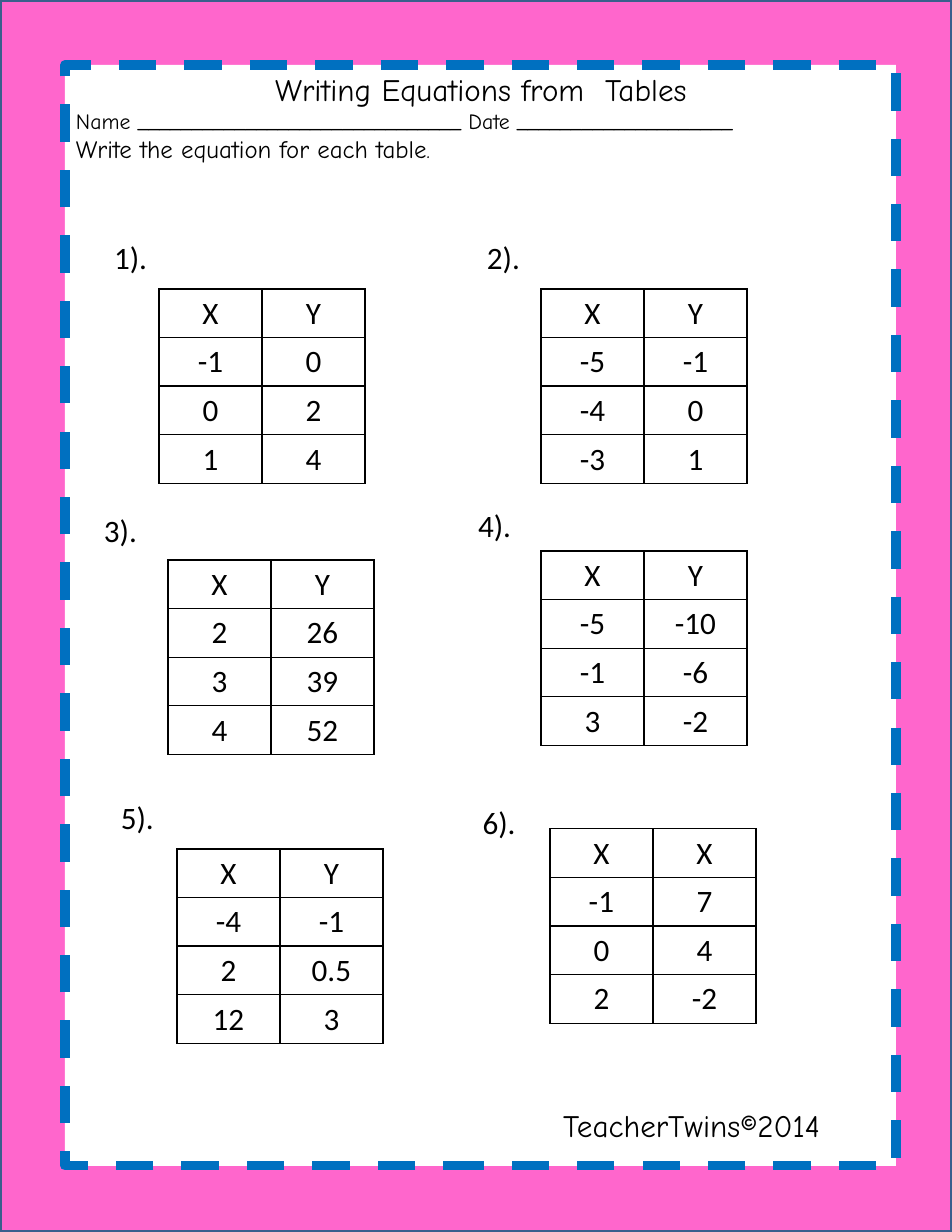
import pptx
import pptx.dml.color
import pptx.enum.dml
import pptx.enum.shapes
import pptx.enum.text
import pptx.oxml
import pptx.oxml.ns
import pptx.util

Inches = pptx.util.Inches
Pt = pptx.util.Pt
RGBColor = pptx.dml.color.RGBColor
PP_ALIGN = pptx.enum.text.PP_ALIGN

PINK = RGBColor(0xFF, 0x66, 0xCC)
NAVY = RGBColor(0x3A, 0x5F, 0x8C)
BLUE = RGBColor(0x00, 0x70, 0xC0)
WHITE = RGBColor(0xFF, 0xFF, 0xFF)
BLACK = RGBColor(0x00, 0x00, 0x00)

HAND_FONT = "Comic Neue"
PLAIN_FONT = "Calibri"
COLUMN_WIDTH = 0.92
ROW_HEIGHT = 0.43
LABEL_HEIGHT = 0.44

# label left, label top, label width, table offset across, table offset down, rows
PROBLEMS = [
    (0.92, 2.08, 0.83, 0.5, 0.5, [("X", "Y"), ("-1", "0"), ("0", "2"), ("1", "4")]),
    (4.25, 2.08, 1.33, 0.58, 0.5, [("X", "Y"), ("-5", "-1"), ("-4", "0"), ("-3", "1")]),
    (0.83, 4.52, 0.92, 0.67, 0.48, [("X", "Y"), ("2", "26"), ("3", "39"), ("4", "52")]),
    (4.17, 4.47, 0.5, 0.66, 0.45, [("X", "Y"), ("-5", "-10"), ("-1", "-6"), ("3", "-2")]),
    (0.98, 7.08, 0.71, 0.6, 0.5, [("X", "Y"), ("-4", "-1"), ("2", "0.5"), ("12", "3")]),
    (4.21, 7.12, 1.42, 0.7, 0.28, [("X", "X"), ("-1", "7"), ("0", "4"), ("2", "-2")]),
]


def format_run(run, font_name, size):
    run.font.name = font_name
    run.font.size = Pt(size)
    run.font.color.rgb = BLACK


def add_text(slide, left, top, width, height, paragraphs, font_name):
    box = slide.shapes.add_textbox(Inches(left), Inches(top), Inches(width), Inches(height))
    text_frame = box.text_frame
    text_frame.word_wrap = True
    text_frame.auto_size = pptx.enum.text.MSO_AUTO_SIZE.SHAPE_TO_FIT_TEXT
    for index, (alignment, runs) in enumerate(paragraphs):
        paragraph = text_frame.add_paragraph() if index else text_frame.paragraphs[0]
        paragraph.alignment = alignment
        for text, size in runs:
            run = paragraph.add_run()
            run.text = text
            format_run(run, font_name, size)


def add_panel(slide, left, top, width, height, fill_color, line_color, line_width):
    panel = slide.shapes.add_shape(
        pptx.enum.shapes.MSO_SHAPE.RECTANGLE,
        Inches(left), Inches(top), Inches(width), Inches(height),
    )
    panel.shadow.inherit = False
    panel.fill.solid()
    panel.fill.fore_color.rgb = fill_color
    panel.line.color.rgb = line_color
    panel.line.width = Pt(line_width)
    return panel


def add_frame(slide, width, height):
    add_panel(slide, 0, 0, width, height, PINK, NAVY, 2)
    page = add_panel(slide, 0.58, 0.58, width - 1.08, height - 1.17, WHITE, BLUE, 6)
    page.line.dash_style = pptx.enum.dml.MSO_LINE.DASH


def add_heading(slide, left, top, width, height):
    name_line = "Name " + "_" * 30 + " Date " + "_" * 20
    add_text(slide, left, top, width, height, [
        (PP_ALIGN.CENTER, [("Writing Equations from  Tables", 20)]),
        (PP_ALIGN.LEFT, [(name_line, 14)]),
        (PP_ALIGN.LEFT, [("Write the equation for each table", 16), (".", 14)]),
    ], HAND_FONT)


def add_borders(cell):
    properties = cell._tc.get_or_add_tcPr()
    namespace = pptx.oxml.ns.nsdecls("a")
    for index, side in enumerate(("lnL", "lnR", "lnT", "lnB")):
        border = pptx.oxml.parse_xml(
            f'<a:{side} {namespace} w="{Pt(1)}"><a:solidFill>'
            f'<a:srgbClr val="{BLACK}"/></a:solidFill></a:{side}>'
        )
        properties.insert(index, border)


def add_value_table(slide, left, top, rows):
    row_count, column_count = len(rows), len(rows[0])
    table = slide.shapes.add_table(
        row_count, column_count, Inches(left), Inches(top),
        Inches(COLUMN_WIDTH * column_count), Inches(ROW_HEIGHT * row_count),
    ).table
    table.first_row = False
    table.horz_banding = False
    for row_index, values in enumerate(rows):
        for column_index, value in enumerate(values):
            cell = table.cell(row_index, column_index)
            cell.fill.background()
            add_borders(cell)
            paragraph = cell.text_frame.paragraphs[0]
            paragraph.text = value
            paragraph.alignment = PP_ALIGN.CENTER
            format_run(paragraph.runs[0], PLAIN_FONT, 20)


def add_problem(slide, number, left, top, label_width, across, down, rows):
    label = [(PP_ALIGN.LEFT, [(f"{number}).", 20)])]
    add_text(slide, left, top, label_width, LABEL_HEIGHT, label, PLAIN_FONT)
    add_value_table(slide, left + across, top + down, rows)


def add_footer(slide, left, top, width, height):
    credit = [(PP_ALIGN.LEFT, [("TeacherTwins©2014", 20)])]
    add_text(slide, left, top, width, height, credit, HAND_FONT)


def main():
    presentation = pptx.Presentation()
    presentation.slide_width = Inches(8.5)
    presentation.slide_height = Inches(11)
    slide = presentation.slides.add_slide(presentation.slide_layouts[6])
    add_frame(slide, 8.5, 11)
    add_heading(slide, 0.58, 0.58, 7.43, 0.94)
    for number, problem in enumerate(PROBLEMS, start=1):
        add_problem(slide, number, *problem)
    add_footer(slide, 4.93, 9.83, 3.08, 0.44)
    presentation.save("out.pptx")


if __name__ == "__main__":
    main()
